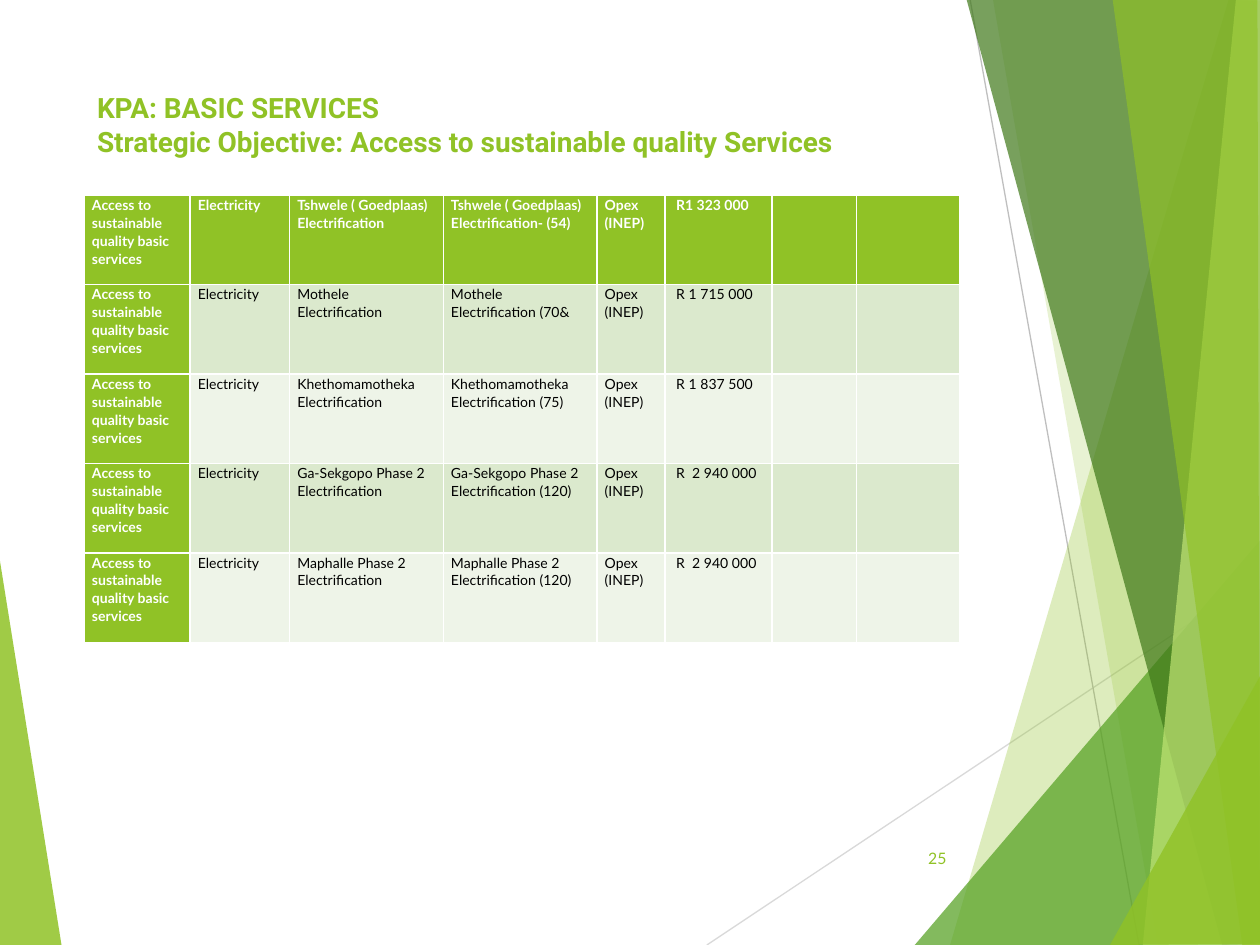
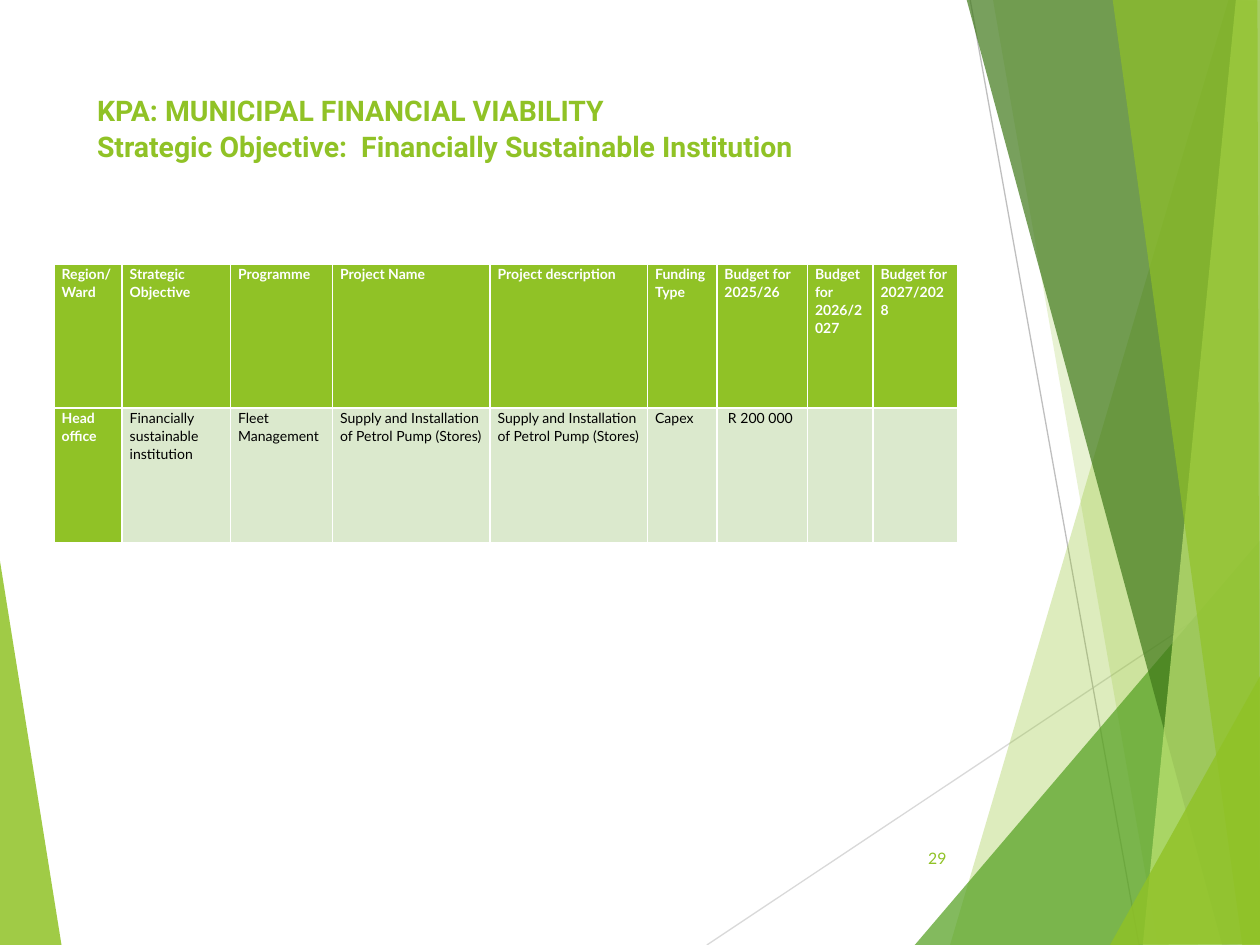
import lxml.etree
import pptx
import pptx.dml.color
import pptx.enum.shapes
import pptx.enum.text
import pptx.oxml.ns
import pptx.util

Inches = pptx.util.Inches
Pt = pptx.util.Pt
RGBColor = pptx.dml.color.RGBColor
qn = pptx.oxml.ns.qn

GREEN = RGBColor(0x90, 0xC2, 0x26)
MID_GREEN = RGBColor(0x54, 0xA0, 0x21)
DARK_GREEN = RGBColor(0x3F, 0x78, 0x19)
PALE_GREEN = RGBColor(0xC0, 0xE4, 0x74)
BAND_DARK = RGBColor(0xDB, 0xE9, 0xCD)
BAND_LIGHT = RGBColor(0xEE, 0xF4, 0xE8)
WHITE = RGBColor(0xFF, 0xFF, 0xFF)
BLACK = RGBColor(0, 0, 0)
GREY = RGBColor(0xBF, 0xBF, 0xBF)
LIGHT_GREY = RGBColor(0xD9, 0xD9, 0xD9)

TITLE_FONT = "Roboto"
BODY_FONT = "Lato"

LEFT_FACET = ([(-0.01, 4.39), (0.49, 7.51), (-0.01, 7.5)], GREEN, 85)
RAYS = [
    ((5.61, 7.5), (10.01, 4.57), LIGHT_GREY),
    ((7.7, 0), (9.04, 7.5), GREY),
]
RIGHT_FACETS = [
    ([(9.75, 0), (7.54, 7.5), (10.02, 7.51), (10.01, 0.01)], GREEN, 30),
    ([(7.88, -0.01), (9.19, 7.5), (10.01, 7.5), (10.01, -0.01)], GREEN, 20),
    ([(7.26, 7.5), (10, 4.29), (10.01, 7.5)], MID_GREEN, 72),
    ([(7.67, -0.01), (9.7, 7.5), (10.01, 7.49), (10.01, -0.01)], DARK_GREEN, 70),
    ([(9.81, -0.01), (9.07, 7.5), (10.01, 7.5), (10, -0.01)], PALE_GREEN, 70),
    ([(8.83, -0.01), (9.86, 7.5), (10, 7.5), (9.98, -0.01)], GREEN, 65),
    ([(8.81, 7.5), (10.01, 5.35), (10.01, 7.49)], GREEN, 80),
]

OBJECTIVE = "Access to sustainable quality basic services"
PROJECTS = [
    ("Tshwele ( Goedplaas) Electrification",
     "Tshwele ( Goedplaas) Electrification- (54)", " R1 323 000"),
    ("Mothele Electrification", "Mothele Electrification (70&", " R 1 715 000"),
    ("Khethomamotheka Electrification",
     "Khethomamotheka Electrification (75)", " R 1 837 500"),
    ("Ga-Sekgopo Phase 2 Electrification",
     "Ga-Sekgopo Phase 2 Electrification (120)", " R  2 940 000"),
    ("Maphalle Phase 2 Electrification",
     "Maphalle Phase 2 Electrification (120)", " R  2 940 000"),
]
ELECTRICITY_ROWS = [
    [OBJECTIVE, "Electricity", name, description, "Opex (INEP)", budget, "", ""]
    for name, description, budget in PROJECTS
]
PUMP = "Supply and Installation of Petrol Pump (Stores)"
FINANCE_ROWS = [
    ["Region/ Ward", "Strategic Objective", "Programme", "Project Name",
     "Project description", "Funding Type", "Budget for 2025/26",
     "Budget for 2026/2027", "Budget for 2027/2028"],
    ["Head office", "Financially sustainable institution", "Fleet Management",
     PUMP, PUMP, "Capex", " R 200 000", "", ""],
]


def format_runs(p, font, size, color, bold=False):
    for r in p.runs:
        r.font.name = font
        r.font.size = Pt(size)
        r.font.bold = bold
        r.font.color.rgb = color


def add_facet(s, points, color, opacity):
    corners = [(Inches(x), Inches(y)) for x, y in points]
    builder = s.shapes.build_freeform(*corners[0])
    builder.add_line_segments(corners[1:], close=True)
    sp = builder.convert_to_shape()
    sp.shadow.inherit = False
    sp.line.fill.background()
    sp.fill.solid()
    sp.fill.fore_color.rgb = color
    clr = sp.element.spPr.find(".//" + qn("a:srgbClr"))
    lxml.etree.SubElement(clr, qn("a:alpha"), val=str(opacity * 1000))
    return sp


def add_ray(s, start, end, color):
    line = s.shapes.add_connector(
        pptx.enum.shapes.MSO_CONNECTOR.STRAIGHT,
        *[Inches(v) for v in start + end])
    line.line.color.rgb = color
    line.line.width = Pt(0.75)
    lxml.etree.SubElement(line.element.spPr, qn("a:effectLst"))
    return line


def add_backdrop(s):
    parts = [add_facet(s, *LEFT_FACET)]
    parts += [add_ray(s, *ray) for ray in RAYS]
    parts += [add_facet(s, *facet) for facet in RIGHT_FACETS]
    for part in parts:
        s.slide_layout.shapes.element.append(part.element)


def set_title(s, text, height, size, line_spacing=1.0, space_after=0):
    sp = s.shapes.title
    sp.left, sp.top = Inches(0.67), Inches(0.67)
    sp.width, sp.height = Inches(6.94), Inches(height)
    tf = sp.text_frame
    tf.text = text
    tf.word_wrap = True
    tf.auto_size = pptx.enum.text.MSO_AUTO_SIZE.NONE
    tf.vertical_anchor = pptx.enum.text.MSO_ANCHOR.TOP
    p = tf.paragraphs[0]
    p.alignment = pptx.enum.text.PP_ALIGN.LEFT
    p.line_spacing = line_spacing
    p.space_before = Pt(0)
    p.space_after = Pt(space_after)
    format_runs(p, TITLE_FONT, size, GREEN, True)


def fill_cell(cell, text, fill, color, bold):
    cell.fill.solid()
    cell.fill.fore_color.rgb = fill
    if not text:
        return
    cell.margin_left = cell.margin_right = Inches(0.06)
    cell.margin_top = cell.margin_bottom = 0
    cell.text = text
    p = cell.text_frame.paragraphs[0]
    p.line_spacing = 1.07
    p.space_after = Pt(8)
    format_runs(p, BODY_FONT, 8, color, bold)


def add_project_table(s, left, top, widths, heights, rows):
    table = s.shapes.add_table(
        len(rows), len(widths), Inches(left), Inches(top),
        Inches(sum(widths)), Inches(sum(heights))).table
    table.first_col = True
    for column, width in zip(table.columns, widths):
        column.width = Inches(width)
    for i, (height, texts) in enumerate(zip(heights, rows)):
        table.rows[i].height = Inches(height)
        band = BAND_DARK if i % 2 else BAND_LIGHT
        for j, text in enumerate(texts):
            header = i == 0 or j == 0
            fill_cell(table.cell(i, j), text, GREEN if header else band,
                      WHITE if header else BLACK, header)


def add_page_number(s, number):
    tf = s.shapes.add_textbox(
        Inches(7.05), Inches(6.61), Inches(0.56), Inches(0.4)).text_frame
    tf.word_wrap = True
    tf.vertical_anchor = pptx.enum.text.MSO_ANCHOR.MIDDLE
    tf.text = str(number)
    p = tf.paragraphs[0]
    p.alignment = pptx.enum.text.PP_ALIGN.RIGHT
    format_runs(p, BODY_FONT, 9, GREEN)


def main():
    prs = pptx.Presentation()
    prs.slide_width, prs.slide_height = Inches(10), Inches(7.5)
    layout = prs.slide_layouts[5]

    s = prs.slides.add_slide(layout)
    add_backdrop(s)
    set_title(s, "KPA: BASIC SERVICES\vStrategic Objective: "
              "Access to sustainable quality Services", 0.88, 16)
    add_project_table(s, 0.67, 1.55,
                      [0.84, 0.79, 1.22, 1.22, 0.54, 0.85, 0.67, 0.82],
                      [0.71] * 5, ELECTRICITY_ROWS)
    add_page_number(s, 25)

    s = prs.slides.add_slide(layout)
    set_title(s, "KPA: MUNICIPAL FINANCIAL VIABILITY\vStrategic Objective:  "
              "Financially Sustainable Institution", 1.04, 16.2, 1.07, 8)
    add_project_table(s, 0.43, 2.1,
                      [0.54, 0.86, 0.81, 1.25, 1.25, 0.55, 0.72, 0.52, 0.67],
                      [1.14, 1.07], FINANCE_ROWS)
    add_page_number(s, 29)

    prs.save("out.pptx")


if __name__ == "__main__":
    main()
